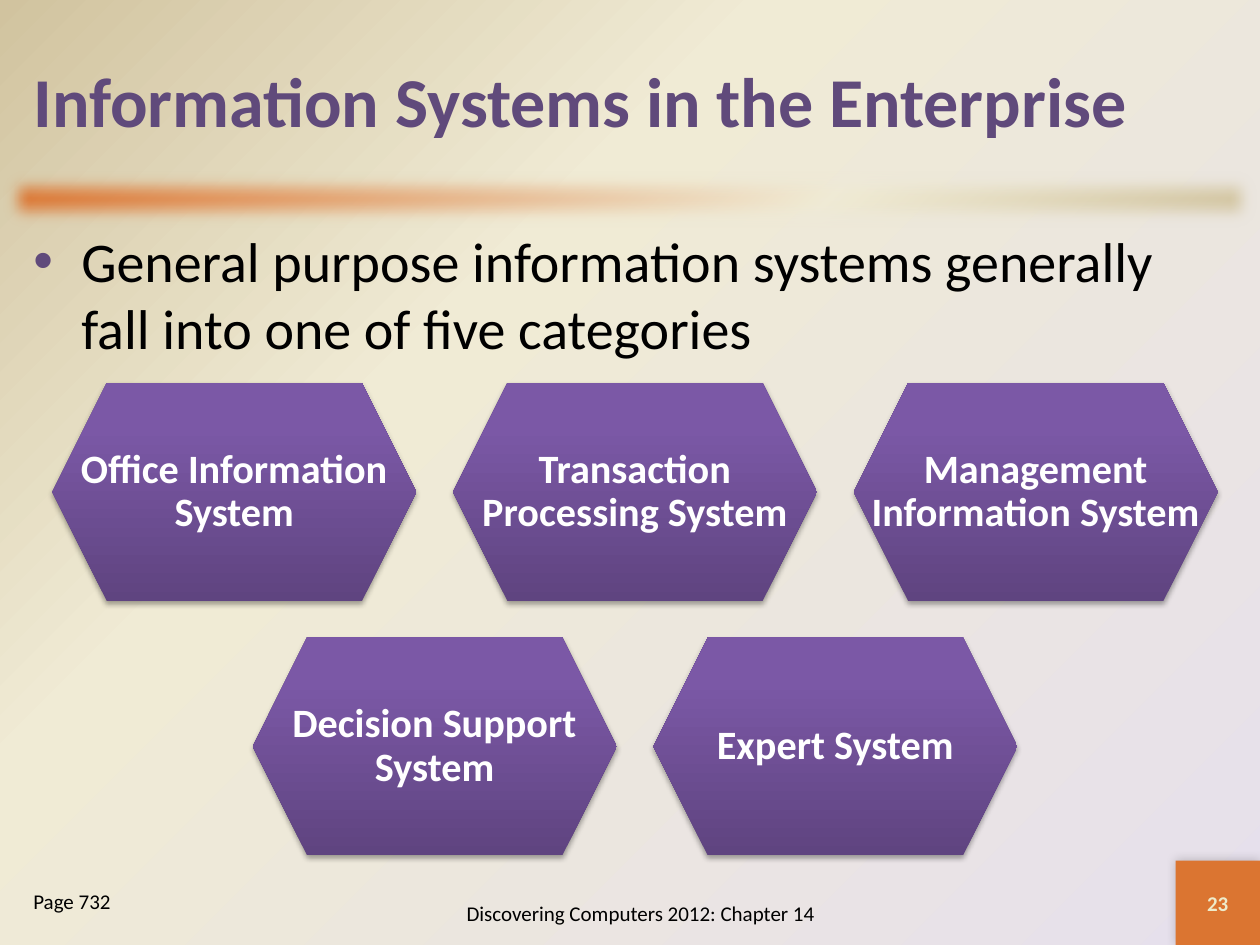
from dataclasses import dataclass

from lxml import etree
from pptx import Presentation
from pptx.dml.color import RGBColor
from pptx.enum import shapes, text
from pptx.oxml.ns import qn
from pptx import util as u

FONT = "Calibri"
WIDTH, HEIGHT = 10, 7.5
MARGIN = WIDTH / 60
HEX_W, HEX_H = 2.89, 1.73
COL_PITCH, ROW_PITCH = 3.18, 2.02
GRID_CENTER, GRID_TOP = 5.04, 3.04
TAB = 0.67

BLACK = RGBColor(0, 0, 0)
WHITE = RGBColor(0xFF, 0xFF, 0xFF)
PURPLE = RGBColor(0x60, 0x4A, 0x7B)
ORANGE = RGBColor(0xDB, 0x75, 0x31)
PALE = RGBColor(0xEE, 0xEB, 0xCA)
LAVENDER = RGBColor(0xE6, 0xE0, 0xEC)
CREAM = RGBColor(0xF0, 0xEB, 0xD5)
TAN = RGBColor(0xD1, 0xC3, 0x9F)
HEX_STOPS = ((0, RGBColor(0x5F, 0x44, 0x80)), (80, RGBColor(0x7B, 0x58, 0xA6)),
             (100, RGBColor(0x7C, 0x57, 0xA8)))

SYSTEM_ROWS = (
    ("Office Information System", "Transaction Processing System",
     "Management Information System"),
    ("Decision Support System", "Expert System"),
)


@dataclass(frozen=True)
class Box:
    left: float
    top: float
    width: float
    height: float

    def emu(self) -> tuple:
        return tuple(u.Inches(v) for v in (self.left, self.top, self.width, self.height))


@dataclass(frozen=True)
class Style:
    size: float
    color: RGBColor
    bold: bool = False
    align: text.PP_ALIGN = text.PP_ALIGN.LEFT
    anchor: text.MSO_ANCHOR = text.MSO_ANCHOR.TOP
    inset: float = 0.05
    spacing: float = 1.0
    bullet: bool = False


@dataclass(frozen=True)
class Shadow:
    alpha: int
    blur: float
    distance: float
    angle: int


def sub(parent, tag: str, **attrs):
    return etree.SubElement(parent, qn(tag), {k: str(v) for k, v in attrs.items()})


def set_gradient(fill, element, stops: tuple, angle: int | None = None) -> None:
    fill.gradient()
    grad = element.find(".//" + qn("a:gradFill"))
    grad.clear()
    grad.set("rotWithShape", "1")
    gs_list = sub(grad, "a:gsLst")
    for position, color in stops:
        sub(sub(gs_list, "a:gs", pos=position * 1000), "a:srgbClr", val=color)
    if angle is None:
        path = sub(grad, "a:path", path="circle")
        sub(path, "a:fillToRect", l=100000, t=100000)
    else:
        sub(grad, "a:lin", ang=angle * 60000, scaled=0)


def add_shape(s, kind, box: Box):
    sp = s.shapes.add_shape(kind, *box.emu())
    sp.shadow.inherit = False
    sp.line.fill.background()
    return sp


def effects(sp):
    return sp.element.spPr.find(qn("a:effectLst"))


def add_shadow(sp, shadow: Shadow) -> None:
    outer = sub(effects(sp), "a:outerShdw", blurRad=u.Pt(shadow.blur),
                dist=u.Pt(shadow.distance), dir=shadow.angle * 60000, rotWithShape=0)
    sub(sub(outer, "a:srgbClr", val=BLACK), "a:alpha", val=shadow.alpha * 1000)


def add_text(s, box: Box, words: str, style: Style) -> None:
    tf = s.shapes.add_textbox(*box.emu()).text_frame
    tf.word_wrap = True
    tf.vertical_anchor = style.anchor
    tf.margin_top = tf.margin_bottom = u.Inches(style.inset)
    p = tf.paragraphs[0]
    p.alignment = style.align
    p.line_spacing = style.spacing
    if style.bullet:
        pr = p._p.get_or_add_pPr()
        pr.set("marL", str(u.Inches(0.38)))
        pr.set("indent", str(-u.Inches(0.38)))
        sub(sub(pr, "a:buClr"), "a:srgbClr", val=PURPLE)
        sub(pr, "a:buFont", typeface="Arial")
        sub(pr, "a:buChar", char="•")
    r = p.add_run()
    r.text = words
    r.font.name = FONT
    r.font.size = u.Pt(style.size)
    r.font.bold = style.bold
    r.font.color.rgb = style.color


def add_system(s, box: Box, name: str) -> None:
    sp = add_shape(s, shapes.MSO_SHAPE.HEXAGON, box)
    set_gradient(sp.fill, sp.element, HEX_STOPS, 270)
    add_shadow(sp, Shadow(35, 3.1, 1.8, 90))
    add_text(s, box, name, Style(23, WHITE, True, text.PP_ALIGN.CENTER,
                                 text.MSO_ANCHOR.MIDDLE, inset=0.1, spacing=0.9))


def main() -> None:
    """Build the slide on the five kinds of enterprise information systems."""
    prs = Presentation()
    prs.slide_width, prs.slide_height = u.Inches(WIDTH), u.Inches(HEIGHT)
    s = prs.slides.add_slide(prs.slide_layouts[6])
    set_gradient(s.background.fill, s.element, ((0, LAVENDER), (65, CREAM), (100, TAN)))

    rule = add_shape(s, shapes.MSO_SHAPE.RECTANGLE, Box(0, 1.33, WIDTH, 0.5))
    set_gradient(rule.fill, rule.element, ((0, ORANGE), (65, CREAM), (100, TAN)), 45)
    sub(effects(rule), "a:softEdge", rad=u.Pt(10))

    corner = Box(WIDTH - TAB, HEIGHT - TAB, TAB, TAB)
    tab = add_shape(s, shapes.MSO_SHAPE.RECTANGLE, corner)
    tab.fill.solid()
    tab.fill.fore_color.rgb = ORANGE
    add_shadow(tab, Shadow(20, 6, 0, 225))

    center, middle = text.PP_ALIGN.CENTER, text.MSO_ANCHOR.MIDDLE
    full = WIDTH - 2 * MARGIN
    add_text(s, Box(MARGIN, MARGIN, full, 1.25), "Information Systems in the Enterprise",
             Style(40, PURPLE, True, anchor=middle))
    add_text(s, Box(MARGIN, 1.75, full, 5.08),
             "General purpose information systems generally fall into one of five categories",
             Style(32, BLACK, bullet=True))
    add_text(s, Box(3, 7, 4.17, 0.5), "Discovering Computers 2012: Chapter 14",
             Style(12, BLACK, align=center, anchor=middle))
    add_text(s, corner, "23", Style(12, PALE, True, center, middle))
    add_text(s, Box(MARGIN, 7, 1.83, 0.5), "Page 732", Style(12, BLACK))

    for row, names in enumerate(SYSTEM_ROWS):
        first = GRID_CENTER - (len(names) - 1) / 2 * COL_PITCH - HEX_W / 2
        for col, name in enumerate(names):
            add_system(s, Box(first + col * COL_PITCH, GRID_TOP + row * ROW_PITCH,
                              HEX_W, HEX_H), name)
    prs.save("out.pptx")


if __name__ == "__main__":
    main()
